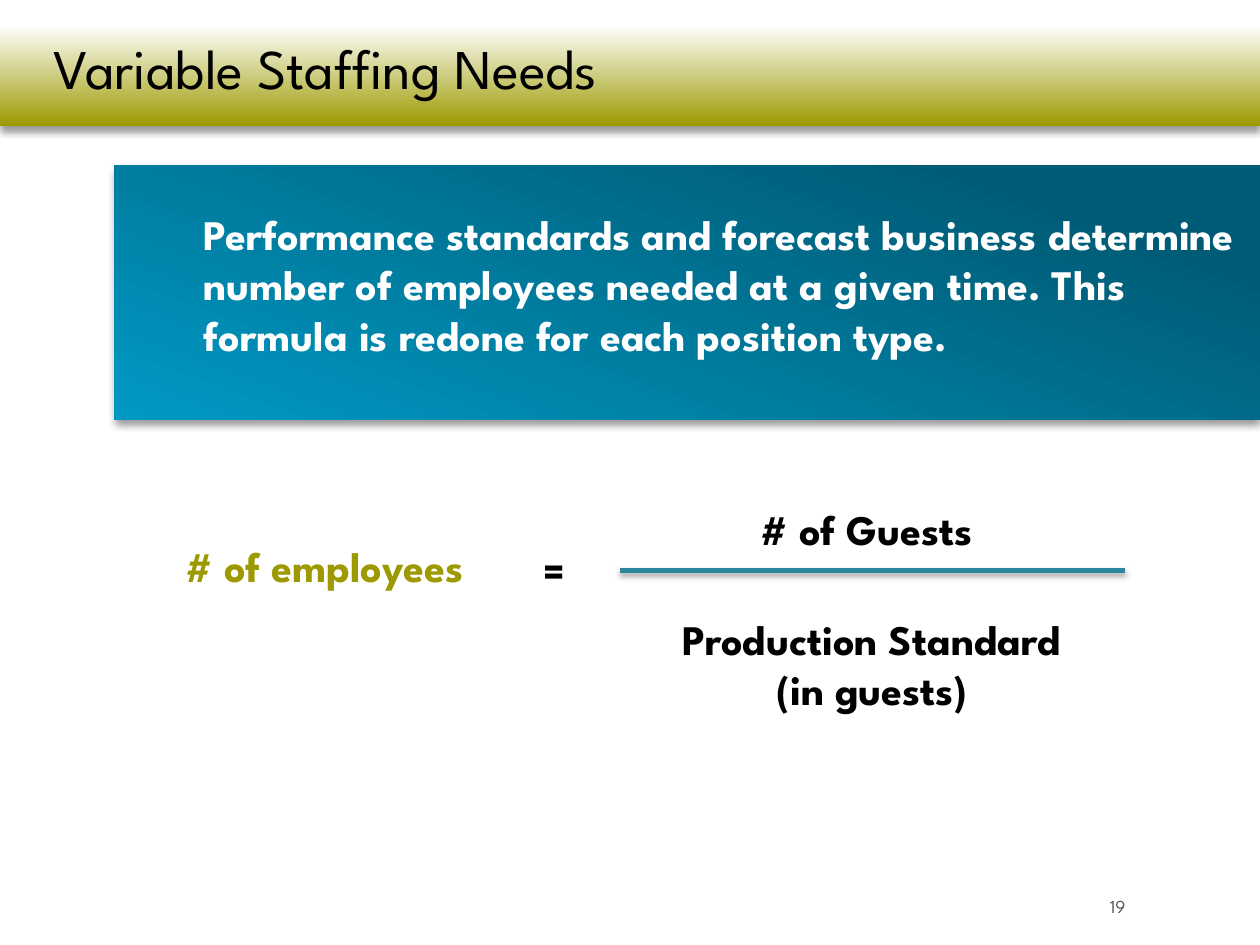
from lxml.etree import SubElement
from pptx import Presentation
from pptx.dml.color import RGBColor
from pptx.enum.shapes import MSO_CONNECTOR, MSO_SHAPE
from pptx.enum.text import MSO_ANCHOR, PP_ALIGN
from pptx.oxml.ns import qn
from pptx.util import Inches, Pt

OLIVE = "9C9A00"
BLACK = "000000"
WHITE = "FFFFFF"


def color(hex_value):
    return RGBColor.from_string(hex_value)


class SlideBuilder:
    font_name = "League Spartan"
    body_size = 24

    def __init__(self, slide):
        self.slide = slide

    def shadow(self, effects, opacity, blur, distance):
        """Add a downward black shadow to an effect list; blur and distance in points."""
        outer = SubElement(effects, qn("a:outerShdw"), blurRad=str(Pt(blur)),
                           dist=str(Pt(distance)), dir="5400000", rotWithShape="0")
        shade = SubElement(outer, qn("a:srgbClr"), val=BLACK)
        SubElement(shade, qn("a:alpha"), val=str(opacity * 1000))

    def band(self, left, top, width, height, stops, angle):
        """Add a shadowed rectangle whose gradient runs at a clockwise angle."""
        band = self.slide.shapes.add_shape(
            MSO_SHAPE.RECTANGLE, Inches(left), Inches(top), Inches(width), Inches(height))
        band.line.fill.background()
        band.fill.gradient()
        band.fill.gradient_angle = 360 - angle
        for stop, (position, hex_value) in zip(band.fill.gradient_stops, stops):
            stop.position = position
            stop.color.rgb = color(hex_value)
        band.shadow.inherit = False
        self.shadow(band.element.spPr.find(qn("a:effectLst")), 40, 4, 3)

    def text(self, left, top, width, height, lines, hex_value=BLACK, size=body_size,
             bold=True, align=PP_ALIGN.CENTER, anchor=MSO_ANCHOR.TOP, wrap=True,
             top_inset=0.05, line_spacing=None):
        box = self.slide.shapes.add_textbox(
            Inches(left), Inches(top), Inches(width), Inches(height))
        frame = box.text_frame
        frame.word_wrap = wrap
        frame.vertical_anchor = anchor
        frame.margin_top = Inches(top_inset)
        for index, line in enumerate(lines):
            paragraph = frame.add_paragraph() if index else frame.paragraphs[0]
            paragraph.alignment = align
            paragraph.line_spacing = line_spacing
            run = paragraph.add_run()
            run.text = line
            run.font.name = self.font_name
            run.font.size = Pt(size)
            run.font.bold = bold
            run.font.color.rgb = color(hex_value)

    def rule(self, left, right, y, hex_value, weight):
        rule = self.slide.shapes.add_connector(
            MSO_CONNECTOR.STRAIGHT, Inches(left), Inches(y), Inches(right), Inches(y))
        rule.line.color.rgb = color(hex_value)
        rule.line.width = Pt(weight)
        effects = SubElement(rule.element.spPr, qn("a:effectLst"))
        self.shadow(effects, 35, 3.1, 1.8)


def main():
    presentation = Presentation()
    presentation.slide_width = Inches(10)
    presentation.slide_height = Inches(7.5)
    builder = SlideBuilder(presentation.slides.add_slide(presentation.slide_layouts[6]))

    builder.band(0, 0, 10, 1, [(0.2, WHITE), (1, OLIVE)], 90)
    builder.text(0.33, 0, 9.33, 1, ["Variable Staffing Needs"], size=32, bold=False,
                 align=PP_ALIGN.LEFT, anchor=MSO_ANCHOR.MIDDLE, top_inset=0.22,
                 line_spacing=0.8)
    builder.text(7.85, 6.99, 1.18, 0.4, ["19"], "595959", size=10.5, bold=False,
                 align=PP_ALIGN.RIGHT, anchor=MSO_ANCHOR.MIDDLE)

    builder.text(1.21, 4.24, 2.73, 0.51, ["# of employees"], OLIVE, wrap=False)
    builder.text(4.2, 4.27, 0.4, 0.51, ["="], wrap=False)
    builder.text(4.6, 3.95, 4.64, 0.51, ["# of Guests "])
    builder.rule(4.92, 8.93, 4.53, "2D879D", 3)
    builder.text(4.6, 4.82, 4.64, 0.91, ["Production Standard", "(in guests)"])

    builder.band(0.91, 1.31, 9.09, 2.02, [(0.17, "005C76"), (1, "0099C4")], 110)
    builder.text(1.52, 1.84, 8.46, 0.83,
                 ["Performance standards and forecast business determine number of "
                  "employees needed at a given time. This formula is redone for each "
                  "position type."],
                 WHITE, align=PP_ALIGN.LEFT, anchor=MSO_ANCHOR.MIDDLE)

    presentation.save("out.pptx")


if __name__ == "__main__":
    main()
